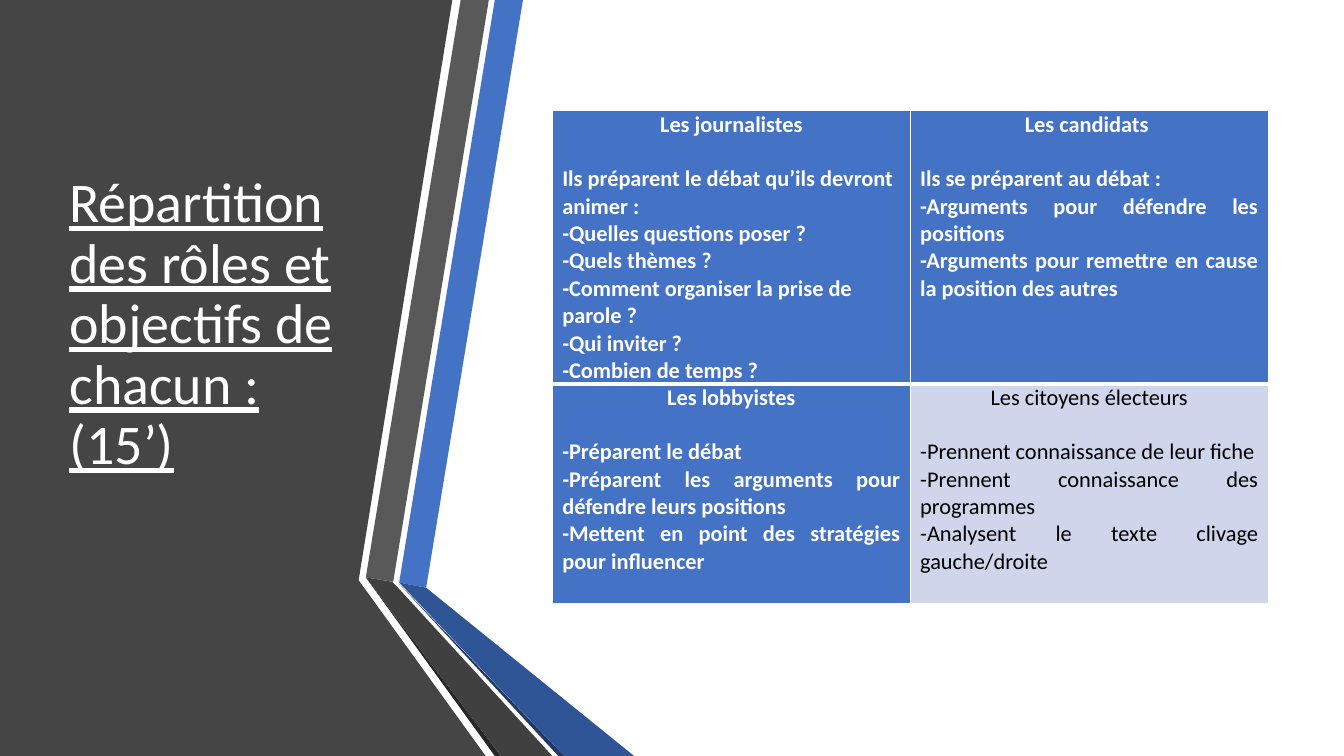
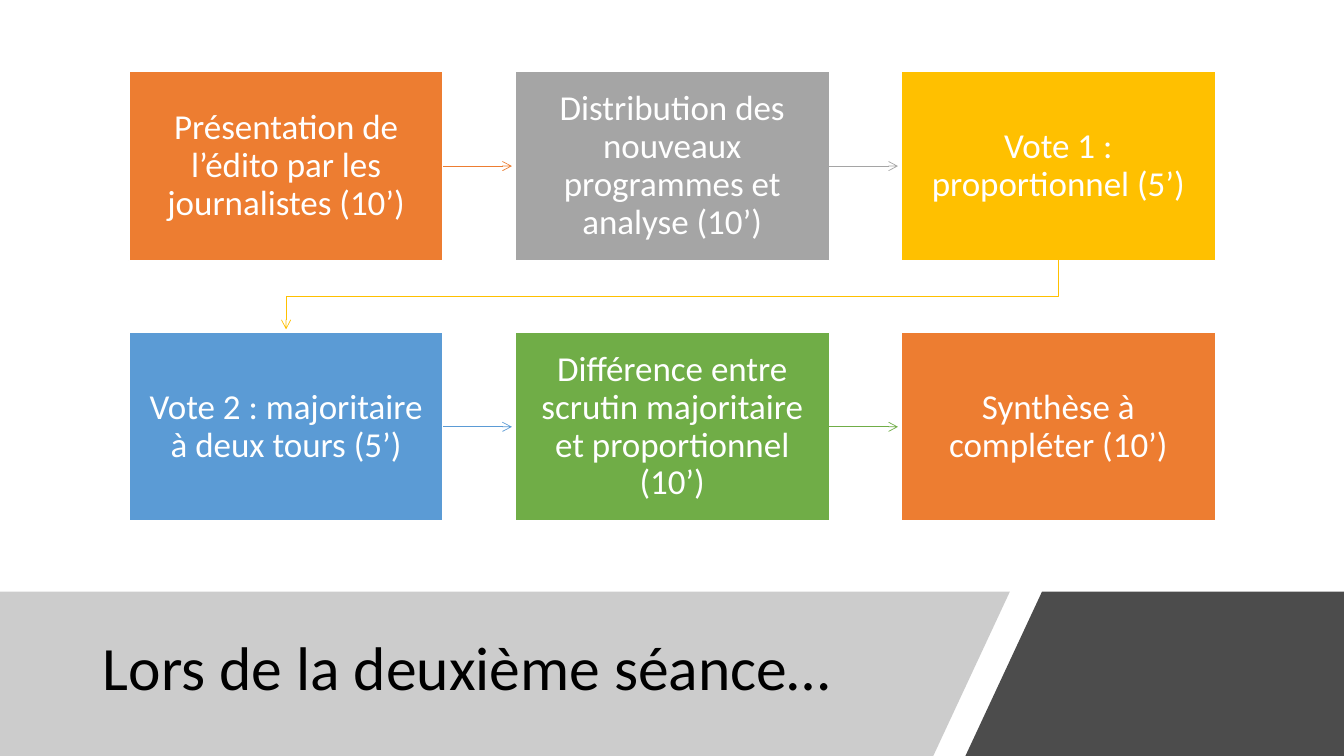
from dataclasses import dataclass

from lxml import etree
from pptx import Presentation
from pptx import util as u
from pptx.dml import color
from pptx.enum import shapes, text
from pptx.oxml import ns

Cm, Pt = u.Cm, u.Pt
ALIGN = text.PP_ALIGN


@dataclass(frozen=True)
class Theme:
    font: str = "Calibri"
    white: str = "FFFFFF"
    black: str = "000000"
    panel: str = "454545"
    blue: str = "4472C4"
    pale_blue: str = "CFD5EA"
    orange: str = "ED7D31"
    grey: str = "A5A5A5"
    gold: str = "FFC000"
    sky: str = "5B9BD5"
    green: str = "70AD47"
    band: str = "808080"
    side_title: float = 40
    band_title: float = 44
    step: float = 25
    table: float = 16
    spacing: float = 0.9


T = Theme()
WIDTH, HEIGHT = 33.87, 19.05


# Shared helpers
def rgb(value):
    return color.RGBColor.from_string(value)


def apply(obj, values):
    for name, value in values.items():
        setattr(obj, name, value)


def add_xml(parent, tag, **attrs):
    el = etree.SubElement(parent, ns.qn(tag))
    for name, value in attrs.items():
        el.set(name, str(value))
    return el


def write(p, words, size, fill, align=ALIGN.LEFT, spacing=None, **font):
    apply(p, {"alignment": align, "line_spacing": spacing})
    r = p.add_run()
    r.text = words
    apply(r.font, {"name": T.font, "size": Pt(size), **font})
    r.font.color.rgb = rgb(fill)


def paint(sp, fill, alpha=None):
    sp.shadow.inherit = False
    sp.fill.solid()
    sp.fill.fore_color.rgb = rgb(fill)
    if alpha:
        srgb = sp.fill._xPr.find(".//" + ns.qn("a:srgbClr"))
        add_xml(srgb, "a:alpha", val=alpha * 1000)


def outline(s, box, points, close=True):
    """Freeform whose points are in cm from the corner of the box."""
    x, y = box[:2]
    pts = [(Cm(x + px), Cm(y + py)) for px, py in points]
    builder = s.shapes.build_freeform(*pts[0], scale=1.0)
    builder.add_line_segments(pts[1:], close=close)
    return builder.convert_to_shape()


def polygon(s, box, points, fill, alpha=None):
    sp = outline(s, box, points)
    paint(sp, fill, alpha)
    sp.line.fill.background()


def arrow_line(sp, fill):
    sp.line.color.rgb = rgb(fill)
    sp.line.width = Pt(0.5)
    add_xml(sp.line._get_or_add_ln(), "a:tailEnd", type="arrow")


def title(s, box, words, size, fill, bottom=0.13, **font):
    tf = s.shapes.add_textbox(*map(Cm, box)).text_frame
    apply(tf, {"word_wrap": True, "margin_bottom": Cm(bottom),
               "vertical_anchor": text.MSO_ANCHOR.MIDDLE})
    write(tf.paragraphs[0], words, size, fill, spacing=T.spacing, **font)


# Dark panel with folded ribbons
RIBBONS = [
    (T.panel, [(0, 0), (11.4, 0), (9.04, 14.62), (12.24, 19.05), (0, 19.05)]),
    (T.blue, [(10.06, 14.68), (10.74, 14.81), (13.18, 0), (12.47, 0)]),
    ("595959", [(12.32, 0), (11.61, 0), (9.22, 14.55), (9.91, 14.66)]),
    ("262626", [(9.22, 14.55), (12.47, 19.05), (12.62, 19.05)]),
    ("203864", [(10.06, 14.71), (14.07, 19.05), (14.22, 19.05)]),
    ("2F5597", [(10.06, 14.68), (14.22, 19.05), (15.98, 19.05),
                (10.74, 14.81)]),
    ("404040", [(13.92, 19.05), (10.03, 14.81), (9.88, 14.66),
                (9.22, 14.55), (12.62, 19.05)]),
]


def side_panel(s, box, words):
    for fill, points in RIBBONS:
        polygon(s, box, points, fill)
    x, y = box[:2]
    # The deep bottom margin lifts the title by half a line
    title(s, (x + 1.5, y + 1.9, 7.72, 14.17), words, T.side_title, T.white,
          bottom=1.68, underline=True)


# Table of roles: heading, lines, alignment of lines
ROLES = [
    [("Les journalistes",
      ["Ils préparent le débat qu’ils devront animer :",
       "-Quelles questions poser ?",
       "-Quels thèmes ?",
       "-Comment organiser la prise de parole ?",
       "-Qui inviter ?",
       "-Combien de temps ?"], ALIGN.LEFT),
     ("Les candidats ",
      ["Ils se préparent au débat :",
       "-Arguments pour défendre les positions",
       "-Arguments pour remettre en cause la position des autres"],
      ALIGN.JUSTIFY)],
    [("Les lobbyistes",
      ["-Préparent le débat ",
       "-Préparent les arguments pour défendre leurs positions",
       "-Mettent en point des stratégies pour influencer"], ALIGN.JUSTIFY),
     ("Les citoyens électeurs",
      ["-Prennent connaissance de leur fiche",
       "-Prennent connaissance des programmes",
       "-Analysent le texte clivage gauche/droite"], ALIGN.JUSTIFY)],
]


def cell_borders(cell, widths):
    tcPr = cell._tc.get_or_add_tcPr()
    for side, width in widths.items():
        ln = add_xml(tcPr, "a:ln" + side, w=Pt(width))
        add_xml(add_xml(ln, "a:solidFill"), "a:srgbClr", val=T.white)


def role_cell(cell, role, plain, widths):
    heading, lines, align = role
    cell_borders(cell, widths)
    cell.fill.solid()
    cell.fill.fore_color.rgb = rgb(T.pale_blue if plain else T.blue)
    apply(cell, {"margin_left": Cm(0.25), "margin_right": Cm(0.25),
                 "margin_top": 0, "margin_bottom": 0})
    style = {"size": T.table, "fill": T.black if plain else T.white,
             "bold": not plain}
    tf = cell.text_frame
    p = tf.paragraphs[0]
    write(p, heading, align=ALIGN.CENTER, **style)
    p.space_after = Pt(19.5)
    for line in lines:
        write(tf.add_paragraph(), line, align=align, **style)


def role_table(s, box, heights):
    tbl = s.shapes.add_table(2, 2, *map(Cm, box)).table
    apply(tbl, {"first_row": False, "horz_banding": False})
    for row, height in zip(tbl.rows, heights):
        row.height = Cm(height)
    for i, row in enumerate(ROLES):
        # A thick rule parts the two rows
        widths = {"L": 1, "R": 1, "T": 3 if i else 1, "B": 1 if i else 3}
        for j, role in enumerate(row):
            role_cell(tbl.cell(i, j), role, i == j == 1, widths)


# Flow of steps, three to a row
STEPS = [
    ("Présentation de l’édito par les journalistes (10’)", T.orange),
    ("Distribution des nouveaux programmes et analyse (10’)", T.grey),
    ("Vote 1 : proportionnel (5’)", T.gold),
    ("Vote 2 : majoritaire à deux tours (5’)", T.sky),
    ("Différence entre scrutin majoritaire et proportionnel (10’)", T.green),
    ("Synthèse à compléter (10’)", T.orange),
]


def step_box(s, box, words, fill):
    sp = s.shapes.add_shape(shapes.MSO_SHAPE.RECTANGLE, *map(Cm, box))
    paint(sp, fill)
    sp.line.color.rgb = rgb(T.white)
    sp.line.width = Pt(1)
    tf = sp.text_frame
    apply(tf, {"word_wrap": True, "vertical_anchor": text.MSO_ANCHOR.MIDDLE,
               "margin_left": Cm(0.38), "margin_right": Cm(0.38),
               "margin_top": Cm(0.41), "margin_bottom": Cm(0.41)})
    write(tf.paragraphs[0], words, T.step, T.white, ALIGN.CENTER, T.spacing)
    return sp


def next_arrow(s, sp, gap, fill):
    y = sp.top + sp.height // 2
    x = sp.left + sp.width
    cx = s.shapes.add_connector(shapes.MSO_CONNECTOR.STRAIGHT,
                                x, y, x + Cm(gap), y)
    cx.begin_connect(sp, 3)
    arrow_line(cx, fill)
    add_xml(cx._element.spPr, "a:effectLst")


def flow(s, box, columns=3, w=7.92, h=4.75, clearance=0.08):
    x, y, width, height = box
    dx, dy = (width - w) / (columns - 1), height - h
    for i, (words, fill) in enumerate(STEPS):
        row, col = divmod(i, columns)
        left, top = x + col * dx, y + row * dy
        sp = step_box(s, (left, top, w, h), words, fill)
        if col < columns - 1:
            next_arrow(s, sp, dx - w - clearance, fill)
        elif i < len(STEPS) - 1:
            # Return to the start of the next row
            start, gap = (left + w / 2, top + h), dy - h
            back = x - left
            turn = outline(s, start, [(0, 0), (0, gap / 2), (back, gap / 2),
                                      (back, gap - clearance)], close=False)
            turn.shadow.inherit = False
            turn.fill.background()
            arrow_line(turn, fill)


# Slanted band with the title at the foot
def title_band(s, box, words):
    x, y, w, h = box
    polygon(s, box, [(0, 0), (25.45, 0), (23.52, h), (0, h)], T.band, 40)
    title(s, (x + 2.34, y + 0.46, 21.44, 3.05), words, T.band_title, T.black)
    polygon(s, box, [(26.26, 0), (w, 0), (w, h), (24.33, h)], T.black, 70)


def main():
    prs = Presentation()
    apply(prs, {"slide_width": Cm(WIDTH), "slide_height": Cm(HEIGHT)})
    blank = prs.slide_layouts[6]

    # Roles
    s = prs.slides.add_slide(blank)
    side_panel(s, (0, 0, 15.98, HEIGHT),
               "Répartition des rôles et objectifs de chacun : (15’)")
    role_table(s, (13.92, 2.79, 18.04, 12.41), (6.88, 5.53))

    # Second session
    s = prs.slides.add_slide(blank)
    title_band(s, (0, 14.91, WIDTH, 4.14), "Lors de la deuxième séance…")
    flow(s, (3.25, 1.81, 27.38, 11.32))

    prs.save("out.pptx")


if __name__ == "__main__":
    main()
